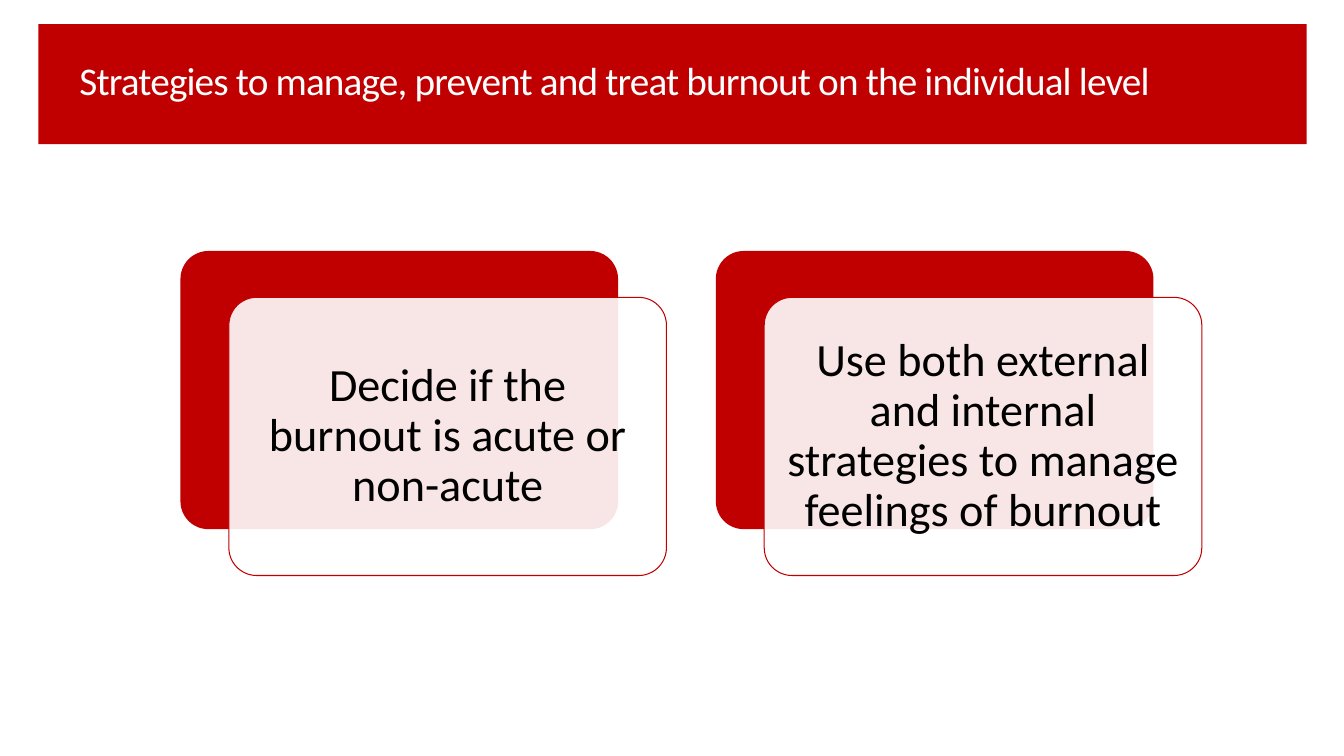
"""Build a slide on managing burnout on the individual level."""
from lxml import etree
from pptx import Presentation
from pptx.dml.color import RGBColor
from pptx.enum.shapes import MSO_SHAPE
from pptx.enum.text import MSO_ANCHOR, PP_ALIGN
from pptx.oxml.ns import qn
from pptx.util import Inches, Pt

RED = RGBColor(0xC0, 0x00, 0x00)
WHITE = RGBColor(0xFF, 0xFF, 0xFF)
BLACK = RGBColor(0x00, 0x00, 0x00)
RECTANGLE = MSO_SHAPE.RECTANGLE
ROUNDED = MSO_SHAPE.ROUNDED_RECTANGLE
MIDDLE = MSO_ANCHOR.MIDDLE
LEFT = PP_ALIGN.LEFT
CENTER = PP_ALIGN.CENTER

CARD_WIDTH, CARD_HEIGHT = 4.34, 2.76
CARD_LEFT, CARD_TOP, CARD_PITCH = 1.79, 2.49, 5.31
OFFSET_X, OFFSET_Y = 0.48, 0.46
TEXT_MARGIN = 0.08
STRATEGIES = [
    "Decide if the burnout is acute or non-acute",
    "Use both external and internal strategies to manage feelings of burnout",
]


class SlideBuilder:
    """Hold the slide and its style, and add each kind of element."""

    font_name = "Calibri"
    line_spacing = 0.9

    def __init__(self, slide):
        self.slide = slide

    def add_panel(self, kind, left, top, width, height, fill, line=None, opacity=None):
        shape = self.slide.shapes.add_shape(
            kind, Inches(left), Inches(top), Inches(width), Inches(height))
        shape.shadow.inherit = False
        shape.fill.solid()
        shape.fill.fore_color.rgb = fill
        if kind == ROUNDED:
            shape.adjustments[0] = 0.1
        if opacity is not None:
            color = shape.fill._xPr.find(".//" + qn("a:srgbClr"))
            etree.SubElement(color, qn("a:alpha"), val=str(opacity * 1000))
        if line is None:
            shape.line.fill.background()
        else:
            shape.line.color.rgb = line
            shape.line.width = Pt(0.75)

    def add_text(self, text, left, top, width, height, *, size, color,
                 align=LEFT, inset=None, tracking=None):
        box = self.slide.shapes.add_textbox(
            Inches(left), Inches(top), Inches(width), Inches(height))
        frame = box.text_frame
        frame.word_wrap = True
        frame.vertical_anchor = MIDDLE
        if inset is not None:
            frame.margin_left = frame.margin_right = Inches(inset)
            frame.margin_top = frame.margin_bottom = Inches(inset)
        paragraph = frame.paragraphs[0]
        paragraph.alignment = align
        paragraph.line_spacing = self.line_spacing
        run = paragraph.add_run()
        run.text = text
        run.font.name = self.font_name
        run.font.size = Pt(size)
        run.font.color.rgb = color
        if tracking is not None:
            run.font._element.set("spc", str(round(tracking * 100)))

    def add_card(self, text, left, top):
        self.add_panel(ROUNDED, left, top, CARD_WIDTH, CARD_HEIGHT, RED)
        left, top = left + OFFSET_X, top + OFFSET_Y
        self.add_panel(ROUNDED, left, top, CARD_WIDTH, CARD_HEIGHT, WHITE,
                       line=RED, opacity=90)
        self.add_text(text, left + TEXT_MARGIN, top + TEXT_MARGIN,
                      CARD_WIDTH - 2 * TEXT_MARGIN, CARD_HEIGHT - 2 * TEXT_MARGIN,
                      size=33, color=BLACK, align=CENTER, inset=0.14)


def main():
    presentation = Presentation()
    presentation.slide_width = Inches(13.33)
    presentation.slide_height = Inches(7.5)
    builder = SlideBuilder(presentation.slides.add_slide(presentation.slide_layouts[6]))
    builder.add_panel(RECTANGLE, 0.38, 0.24, 12.58, 1.19, RED)
    builder.add_text(
        "Strategies to manage, prevent and treat burnout on the individual level",
        0.69, 0.33, 11.54, 0.99, size=28, color=WHITE, tracking=-0.6)
    for index, strategy in enumerate(STRATEGIES):
        builder.add_card(strategy, CARD_LEFT + index * CARD_PITCH, CARD_TOP)
    presentation.save("out.pptx")


if __name__ == "__main__":
    main()
